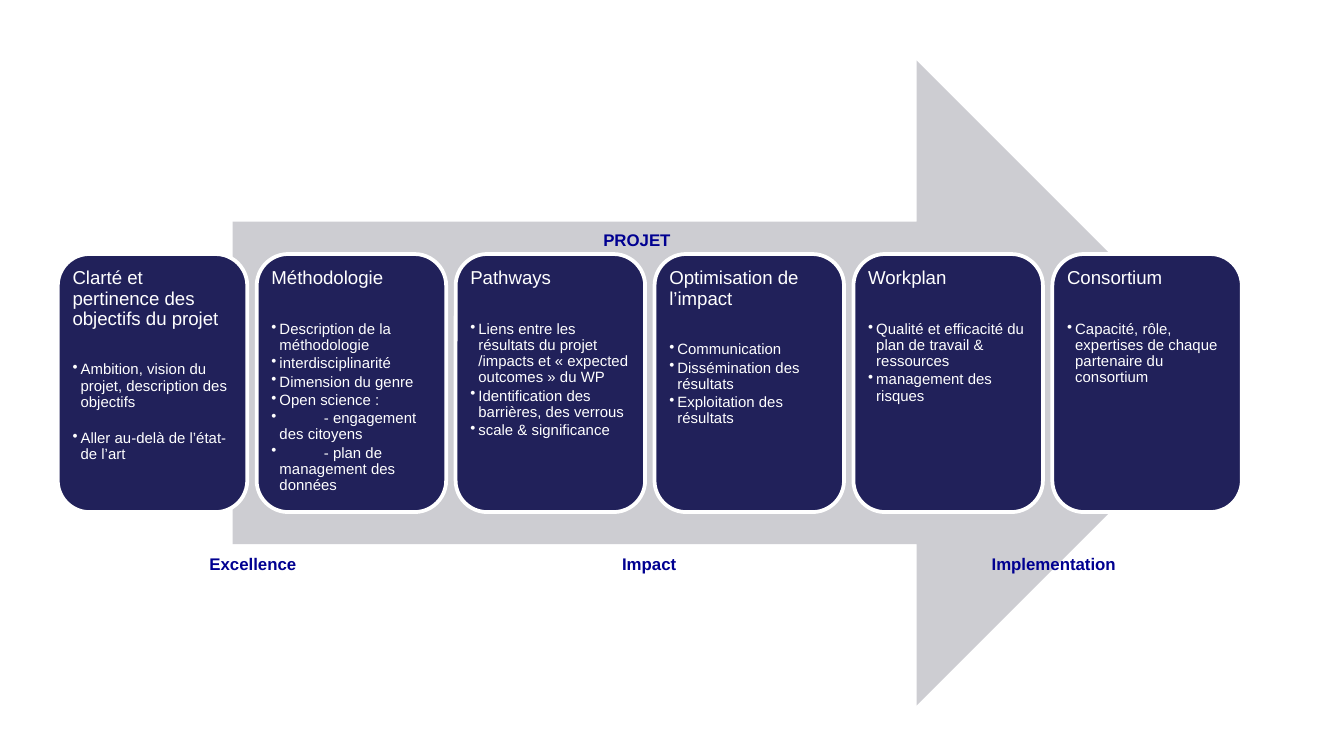
from lxml import etree
from pptx import Presentation
from pptx.dml.color import RGBColor
from pptx.enum.shapes import MSO_SHAPE
from pptx.enum.text import MSO_ANCHOR
from pptx.oxml.ns import qn
from pptx.util import Inches, Pt

ARROW = MSO_SHAPE.RIGHT_ARROW
CARD = MSO_SHAPE.ROUNDED_RECTANGLE
TOP = MSO_ANCHOR.TOP

COLORS = {"arrow": "CDCDD2", "card": "21215A", "white": "FFFFFF", "label": "000091"}
FONT = "Arial"
HANG = 0.06
TAB_STOP = 0.39
CARD_WIDTH, CARD_HEIGHT, CARD_STEP = 1.41, 1.92, 1.48
CARD_PADDING, CARD_INSET = 0.07, 0.04
TITLE_GAP, BULLET_GAP, WIDE_GAP = 17.5, 1.2, 11

CARDS = [
    ("Clarté et pertinence des objectifs du projet", WIDE_GAP, [
        "Ambition, vision du projet, description des objectifs",
        "Aller au-delà de l’état-de l’art"]),
    ("Méthodologie", BULLET_GAP, [
        "Description de la méthodologie ",
        "interdisciplinarité",
        "Dimension du genre",
        "Open science :",
        "\t- engagement des citoyens",
        "\t- plan de management des \tdonnées"]),
    ("Pathways", BULLET_GAP, [
        "Liens entre les résultats du projet /impacts et « expected outcomes » du WP",
        "Identification des barrières, des verrous",
        "scale & significance"]),
    ("Optimisation de l’impact", BULLET_GAP, [
        "Communication",
        "Dissémination des résultats",
        "Exploitation des résultats"]),
    ("Workplan", BULLET_GAP, [
        "Qualité et efficacité du plan de travail & ressources",
        "management des risques"]),
    ("Consortium", BULLET_GAP, [
        "Capacité, rôle, expertises de chaque partenaire du consortium"]),
]

LABELS = [
    ("Excellence", 1.46, 4.07, 1.02),
    ("Impact", 4.53, 4.07, 1.02),
    ("Implementation", 7.28, 4.07, 1.26),
    ("PROJET", 4.39, 1.66, 1.02),
]


def color(name):
    """Return the named colour."""
    return RGBColor.from_string(COLORS[name])


def style_runs(para, size, color_name, bold=False):
    """Format every run of a paragraph."""
    for span in para.runs:
        span.font.name = FONT
        span.font.size = Pt(size)
        span.font.bold = bold
        span.font.color.rgb = color(color_name)


def add_bullet(para):
    """Give a paragraph a hanging bullet and a tab stop."""
    para.level = 1
    properties = para._p.get_or_add_pPr()
    properties.set("marL", str(Inches(HANG)))
    properties.set("indent", str(-Inches(HANG)))
    etree.SubElement(properties, qn("a:buChar"), char="•")
    tabs = etree.SubElement(properties, qn("a:tabLst"))
    etree.SubElement(tabs, qn("a:tab"), pos=str(Inches(TAB_STOP)), algn="l")


def add_filled_shape(page, kind, left, top, width, height, fill):
    """Add a flat preset shape without an outline."""
    shape = page.shapes.add_shape(
        kind, Inches(left), Inches(top), Inches(width), Inches(height))
    shape.shadow.inherit = False
    shape.fill.solid()
    shape.fill.fore_color.rgb = color(fill)
    shape.line.fill.background()
    return shape


def add_text_frame(page, left, top, width, height):
    """Add a wrapping text box and return its frame."""
    box = page.shapes.add_textbox(
        Inches(left), Inches(top), Inches(width), Inches(height))
    frame = box.text_frame
    frame.word_wrap = True
    frame.vertical_anchor = TOP
    return frame


def add_card(page, left, top, width, height, title, gap, bullets):
    """Add a rounded card with a title and bullets."""
    card = add_filled_shape(page, CARD, left, top, width, height, "card")
    card.line.color.rgb = color("white")
    card.line.width = Pt(2)
    frame = add_text_frame(page, left + CARD_PADDING, top + CARD_PADDING,
                           width - 2 * CARD_PADDING, height - 2 * CARD_PADDING)
    frame.margin_left = frame.margin_right = Inches(CARD_INSET)
    frame.margin_top = frame.margin_bottom = Inches(CARD_INSET)
    heading = frame.paragraphs[0]
    heading.text = title
    heading.line_spacing = 0.9
    heading.space_after = Pt(TITLE_GAP)
    style_runs(heading, 10, "white")
    for bullet in bullets:
        para = frame.add_paragraph()
        para.text = bullet
        add_bullet(para)
        para.line_spacing = 0.9
        para.space_after = Pt(gap)
        style_runs(para, 8, "white")


def add_label(page, text, left, top, width):
    """Add a bold section label."""
    frame = add_text_frame(page, left, top, width, 0.25)
    frame.text = text
    style_runs(frame.paragraphs[0], 9, "label", bold=True)


def main():
    """Build the project overview slide."""
    deck = Presentation()
    deck.slide_width = Inches(10)
    deck.slide_height = deck.slide_width * 9 // 16
    page = deck.slides.add_slide(deck.slide_layouts[6])
    add_filled_shape(page, ARROW, 1.73, 0.45, 7.49, 4.8, "arrow")
    for index, (title, gap, bullets) in enumerate(CARDS):
        add_card(page, 0.43 + index * CARD_STEP, 1.89, CARD_WIDTH, CARD_HEIGHT,
                 title, gap, bullets)
    for label in LABELS:
        add_label(page, *label)
    deck.save("out.pptx")


if __name__ == "__main__":
    main()
